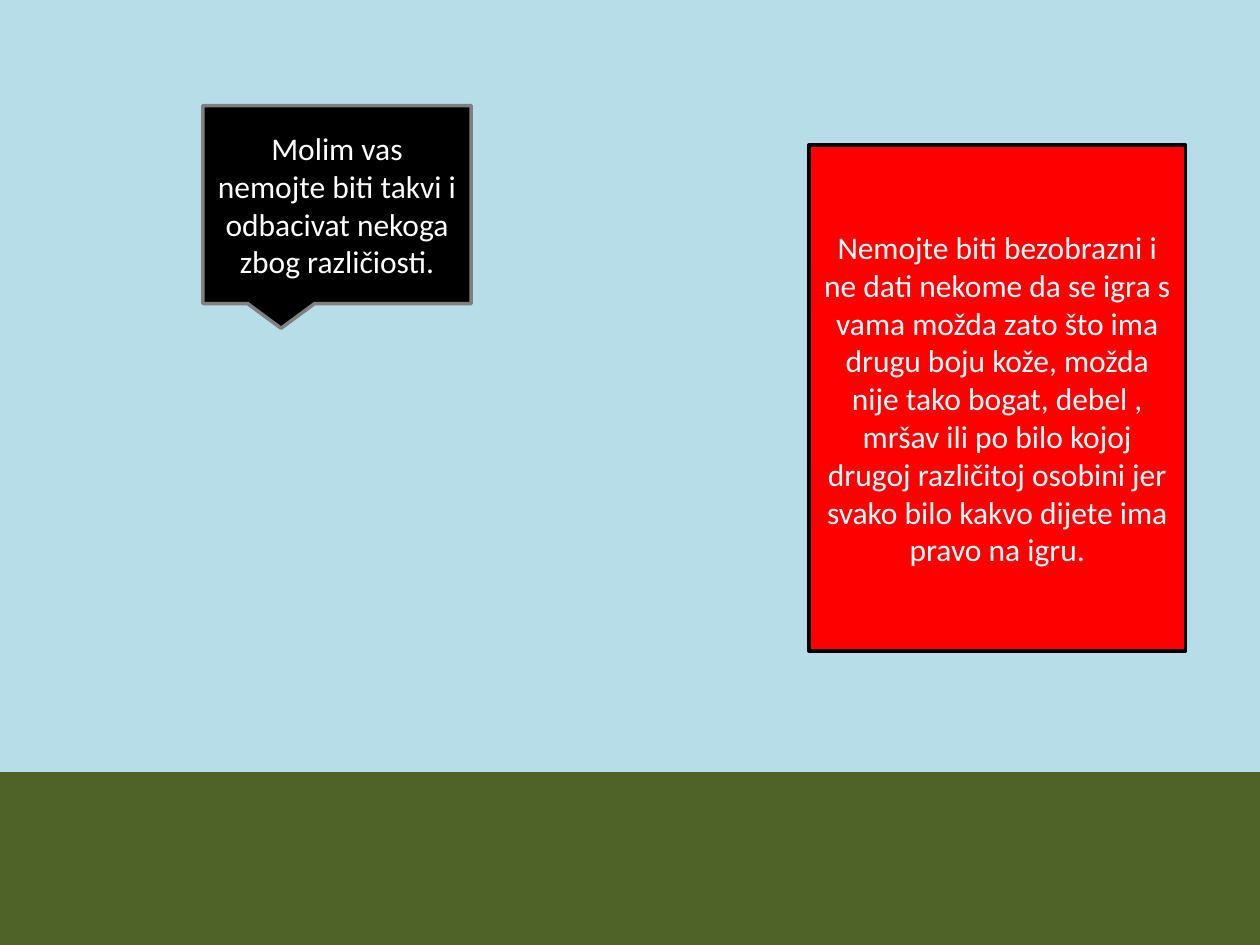
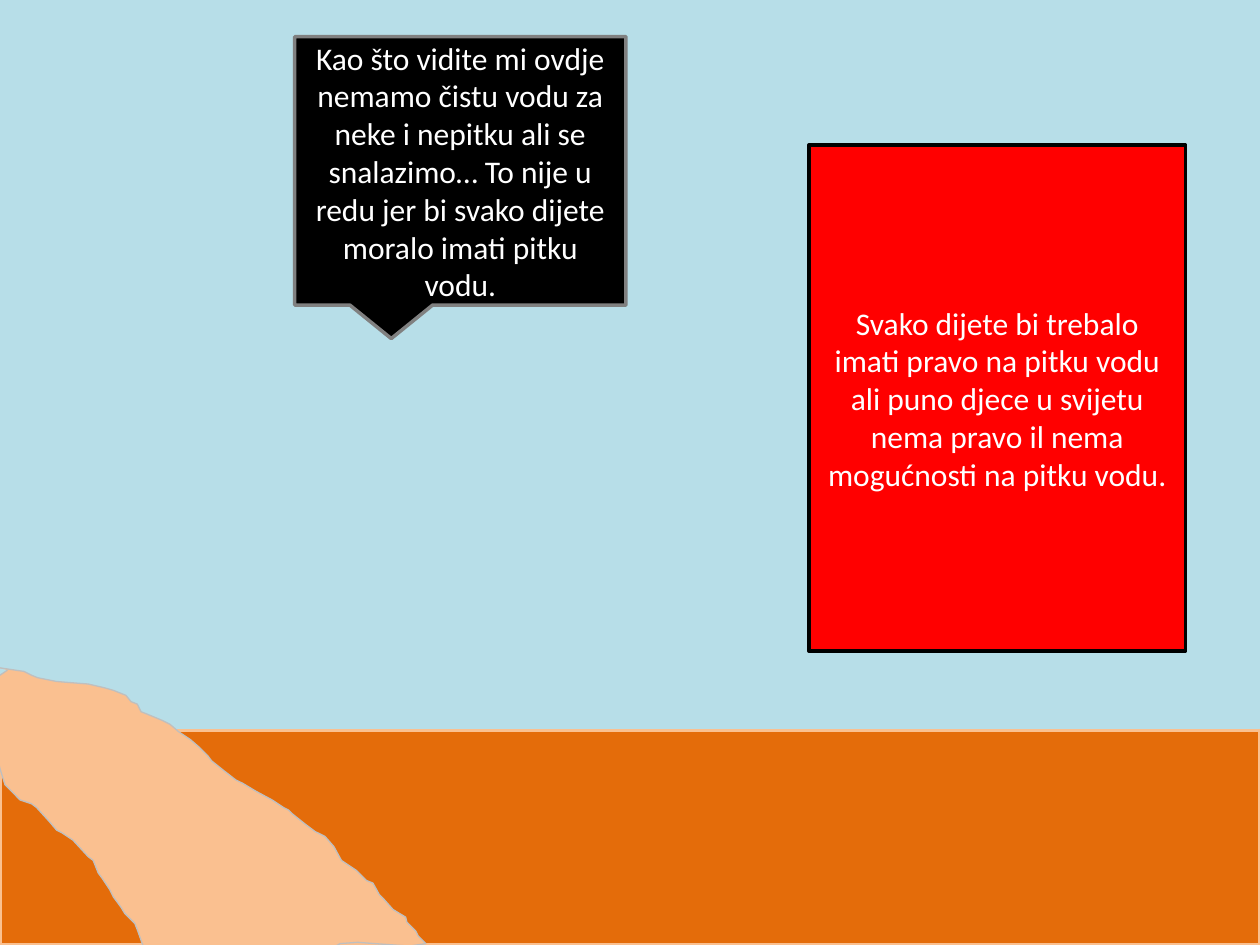
from dataclasses import dataclass

from pptx import Presentation
from pptx.dml.color import RGBColor
from pptx.enum.shapes import MSO_SHAPE
from pptx.enum.text import MSO_ANCHOR, PP_ALIGN
from pptx.util import Cm, Pt

RECTANGLE = MSO_SHAPE.RECTANGLE
CALLOUT = MSO_SHAPE.RECTANGULAR_CALLOUT
MIDDLE = MSO_ANCHOR.MIDDLE
CENTER = PP_ALIGN.CENTER


@dataclass(frozen=True)
class Theme:
    sky: str = "B7DEE8"
    grass: str = "4F6228"
    earth: str = "E46C0A"
    sand: str = "FAC090"
    sand_edge: str = "BFBFBF"
    speech: str = "000000"
    speech_edge: str = "808080"
    message: str = "FF0000"
    message_edge: str = "000000"
    text: str = "FFFFFF"
    font: str = "Calibri"
    text_size: float = 18
    border: float = 2
    thin_border: float = 0.75


THEME = Theme()
SLIDE_WIDTH, SLIDE_HEIGHT = 25.4, 19.05
MESSAGE_BOX = (16.31, 2.92, 7.59, 10.21)

PATH_UNIT = SLIDE_WIDTH / 1000
SAND_PATH = [
    (-1, -50), (19, -47), (25, -44), (30, -42), (45, -39), (57, -38),
    (70, -37), (83, -34), (90, -32), (100, -28), (104, -23), (109, -21),
    (112, -15), (117, -13), (129, -8), (135, -5), (142, 1), (151, 7),
    (158, 13), (165, 20), (168, 24), (178, 32), (187, 39), (193, 42),
    (203, 48), (216, 55), (225, 61), (229, 63), (232, 66), (242, 74),
    (250, 80), (258, 84), (265, 92), (271, 103), (283, 111), (291, 119),
    (296, 121), (301, 130), (304, 133), (312, 142), (317, 145), (322, 148),
    (323, 152), (330, 159), (332, 163), (338, 169), (325, 171), (297, 169),
    (284, 168), (270, 169), (265, 172), (261, 174), (255, 177), (225, 175),
    (216, 174), (210, 171), (183, 172), (178, 174), (114, 172), (109, 158),
    (107, 153), (99, 145), (96, 140), (90, 132), (87, 126), (81, 117),
    (78, 113), (74, 103), (70, 100), (58, 87), (49, 81), (45, 79),
    (39, 72), (29, 61), (25, 58), (16, 55), (9, 48), (4, 43), (0, 30),
    (-1, 26), (-4, -3), (-6, -9), (-4, -42), (0, -44), (6, -48),
]

SCENES = [
    {
        "horizon": 15.6,
        "ground": (THEME.grass, THEME.grass),
        "sand": False,
        "speech_box": (4.09, 2.13, 5.41, 3.99),
        "speech": "Molim vas nemojte biti takvi i odbacivat nekoga zbog "
                  "različiosti.",
        "message": "Nemojte biti bezobrazni i ne dati nekome da se igra s vama "
                   "možda zato što ima drugu boju kože, možda nije tako bogat, "
                   "debel , mršav ili po bilo kojoj drugoj različitoj osobini "
                   "jer svako bilo kakvo dijete ima pravo na igru.",
    },
    {
        "horizon": 14.73,
        "ground": (THEME.earth, THEME.sand),
        "sand": True,
        "speech_box": (5.94, 0.74, 6.68, 5.41),
        "speech": "Kao što vidite mi ovdje nemamo čistu vodu za neke i nepitku "
                  "ali se snalazimo… To nije u redu jer bi svako dijete moralo "
                  "imati pitku vodu.",
        "message": "Svako dijete bi trebalo imati pravo na pitku vodu ali puno "
                   "djece u svijetu nema pravo il nema mogućnosti na pitku vodu.",
    },
]


def paint(shape, fill, edge, border=THEME.border):
    shape.shadow.inherit = False
    shape.fill.solid()
    shape.fill.fore_color.rgb = RGBColor.from_string(fill)
    shape.line.color.rgb = RGBColor.from_string(edge)
    shape.line.width = Pt(border)


def add_panel(slide, kind, box, fill, edge):
    panel = slide.shapes.add_shape(kind, *map(Cm, box))
    paint(panel, fill, edge)
    return panel


def add_words(panel, words):
    frame = panel.text_frame
    frame.word_wrap = True
    frame.vertical_anchor = MIDDLE
    paragraph = frame.paragraphs[0]
    paragraph.alignment = CENTER
    run = paragraph.add_run()
    run.text = words
    letter_format = {"name": THEME.font, "size": Pt(THEME.text_size)}
    for attribute, value in letter_format.items():
        setattr(run.font, attribute, value)
    run.font.color.rgb = RGBColor.from_string(THEME.text)


def add_landscape(slide, box, horizon, ground_colors):
    left, top, width, height = box
    add_panel(slide, RECTANGLE, (left, top, width, horizon),
              THEME.sky, THEME.sky)
    ground_box = (left, top + horizon, width, height - horizon)
    add_panel(slide, RECTANGLE, ground_box, *ground_colors)
    return ground_box


def add_sand(slide, ground_box):
    left, top = ground_box[:2]
    outline = slide.shapes.build_freeform(*SAND_PATH[0], scale=Cm(PATH_UNIT))
    outline.add_line_segments(SAND_PATH[1:], close=False)
    sand = outline.convert_to_shape(Cm(left), Cm(top))
    paint(sand, THEME.sand, THEME.sand_edge, THEME.thin_border)


def add_speech(slide, box, words):
    speech = add_panel(slide, CALLOUT, box, THEME.speech, THEME.speech_edge)
    add_words(speech, words)


def add_message(slide, box, words):
    message = add_panel(slide, RECTANGLE, box,
                        THEME.message, THEME.message_edge)
    add_words(message, words)


def add_scene(deck, scene):
    slide = deck.slides.add_slide(deck.slide_layouts.get_by_name("Blank"))
    ground_box = add_landscape(slide, (0, 0, SLIDE_WIDTH, SLIDE_HEIGHT),
                               scene["horizon"], scene["ground"])
    if scene["sand"]:
        add_sand(slide, ground_box)
    add_speech(slide, scene["speech_box"], scene["speech"])
    add_message(slide, MESSAGE_BOX, scene["message"])


def main():
    deck = Presentation()
    deck.slide_width, deck.slide_height = Cm(SLIDE_WIDTH), Cm(SLIDE_HEIGHT)
    for scene in SCENES:
        add_scene(deck, scene)
    deck.save("out.pptx")


if __name__ == "__main__":
    main()
